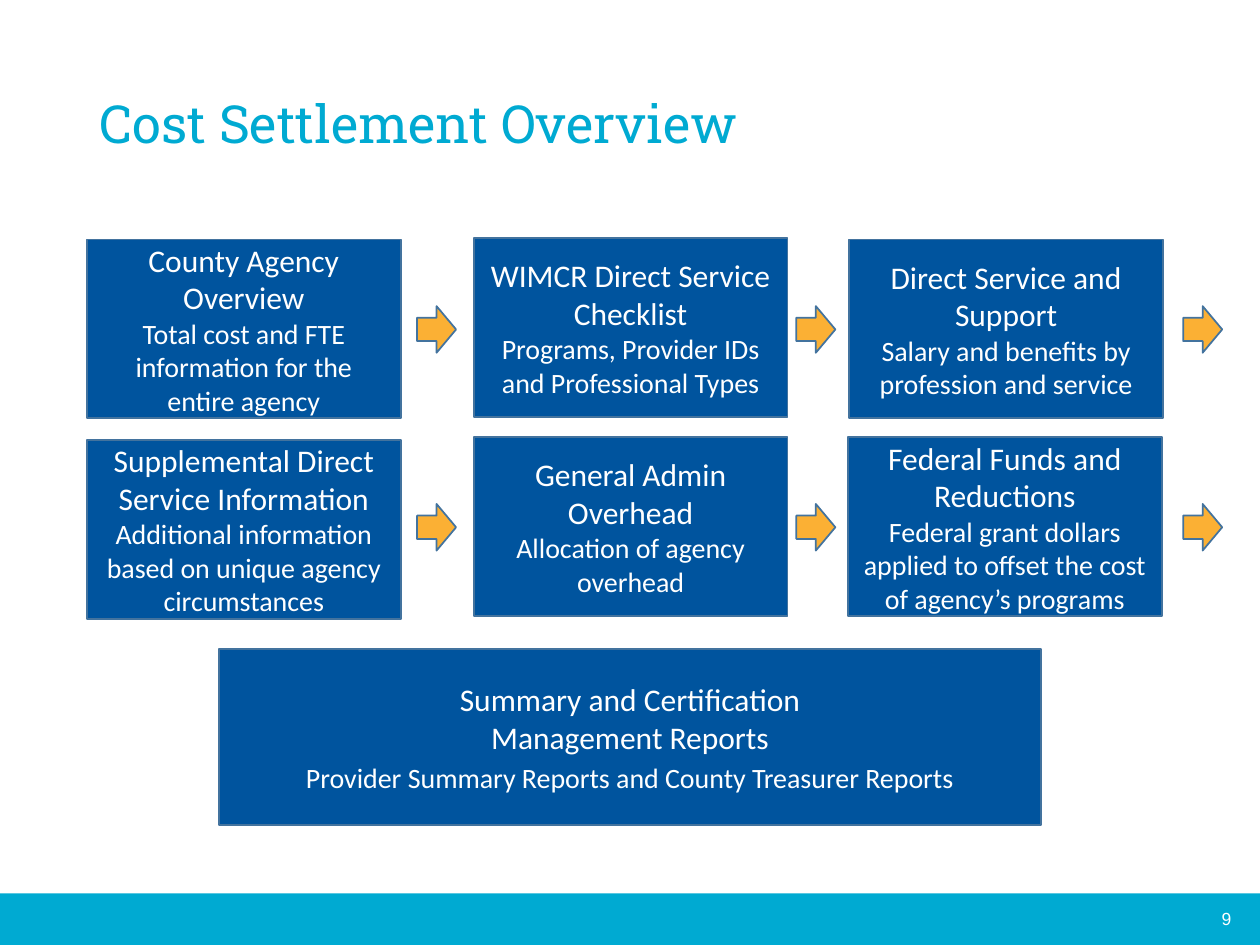
from pptx import Presentation
from pptx.dml.color import RGBColor
from pptx.enum.shapes import MSO_SHAPE as Shape
from pptx.enum.text import MSO_ANCHOR as Anchor, PP_ALIGN as Align
from pptx.util import Inches, Pt

COLORS = {"sky": "00AAD2", "navy": "00549E", "edge": "43739E",
          "amber": "FBB034", "white": "FFFFFF"}
HEADING = {"name": "Calibri", "size": Pt(18), "color": "white"}
DETAIL = {**HEADING, "size": Pt(16)}
TITLE = {"name": "Roboto Slab", "size": Pt(30), "color": "sky"}
PAGE_NUMBER = {"name": "Arial", "size": Pt(10), "color": "white"}

STEP_SIZE = (2.49, 1.42)
ARROW_SIZE = (0.31, 0.37)
ARROW_LEFTS = (3.31, 6.32, 9.39)
ARROW_TOPS = (2.43, 4)
STEPS = [
    (0.69, 1.9, "County Agency Overview",
     "Total cost and FTE information for the entire agency"),
    (3.76, 1.89, "WIMCR Direct Service Checklist",
     "Programs, Provider IDs and Professional Types"),
    (6.74, 1.9, "Direct Service and Support",
     "Salary and benefits by profession and service"),
    (0.69, 3.49, "Supplemental Direct Service Information",
     "Additional information based on unique agency circumstances"),
    (3.76, 3.47, "General Admin Overhead",
     "Allocation of agency overhead"),
    (6.73, 3.47, "Federal Funds and Reductions",
     "Federal grant dollars applied to offset the cost of agency’s programs"),
]


def rgb(color):
    return RGBColor.from_string(COLORS[color])


def write_paragraph(paragraph, text, style, **layout):
    run = paragraph.add_run()
    run.text = text
    for attribute, value in style.items():
        if attribute == "color":
            run.font.color.rgb = rgb(value)
        else:
            setattr(run.font, attribute, value)
    for attribute, value in layout.items():
        setattr(paragraph, attribute, value)


def add_block(slide, kind, left, top, size, fill, edge=None):
    block = slide.shapes.add_shape(
        kind, *(Inches(length) for length in (left, top, *size)))
    block.shadow.inherit = False
    block.fill.solid()
    block.fill.fore_color.rgb = rgb(fill)
    if edge:
        block.line.color.rgb = rgb(edge)
        block.line.width = Pt(1)
    else:
        block.line.fill.background()
    return block


def add_step(slide, left, top, size, headings, detail, detail_gap=0):
    frame = add_block(slide, Shape.RECTANGLE, left, top, size,
                      "navy", "edge").text_frame
    frame.word_wrap = True
    frame.vertical_anchor = Anchor.MIDDLE
    paragraph = frame.paragraphs[0]
    for heading in headings:
        write_paragraph(paragraph, heading, HEADING, alignment=Align.CENTER)
        paragraph = frame.add_paragraph()
    write_paragraph(paragraph, detail, DETAIL, alignment=Align.CENTER,
                    space_before=Pt(detail_gap))


def add_title(slide, text):
    title = slide.shapes.title
    bounds = {"left": 0.69, "top": 0.73, "width": 8.62, "height": 0.99}
    for attribute, value in bounds.items():
        setattr(title, attribute, Inches(value))
    title.text_frame.vertical_anchor = Anchor.TOP
    write_paragraph(title.text_frame.paragraphs[0], text, TITLE,
                    alignment=Align.LEFT, line_spacing=0.9)


def add_footer(slide, number):
    add_block(slide, Shape.RECTANGLE, 0, 7.09, (10, 0.41), "sky")
    frame = slide.shapes.add_textbox(
        Inches(7.62), Inches(7.16), Inches(2.25), Inches(0.2)).text_frame
    frame.word_wrap = True
    write_paragraph(frame.paragraphs[0], number, PAGE_NUMBER,
                    alignment=Align.RIGHT)


def main():
    deck = Presentation()
    deck.slide_width, deck.slide_height = Inches(10), Inches(7.5)
    slide = deck.slides.add_slide(deck.slide_layouts[5])
    add_title(slide, "Cost Settlement Overview")
    for left, top, heading, detail in STEPS:
        add_step(slide, left, top, STEP_SIZE, [heading], detail)
    add_step(slide, 1.74, 5.15, (6.52, 1.4),
             ["Summary and Certification", "Management Reports"],
             "Provider Summary Reports and County Treasurer Reports",
             detail_gap=3)
    for top in ARROW_TOPS:
        for left in ARROW_LEFTS:
            add_block(slide, Shape.RIGHT_ARROW, left, top, ARROW_SIZE,
                      "amber", "edge")
    add_footer(slide, "9")
    deck.save("out.pptx")


if __name__ == "__main__":
    main()
